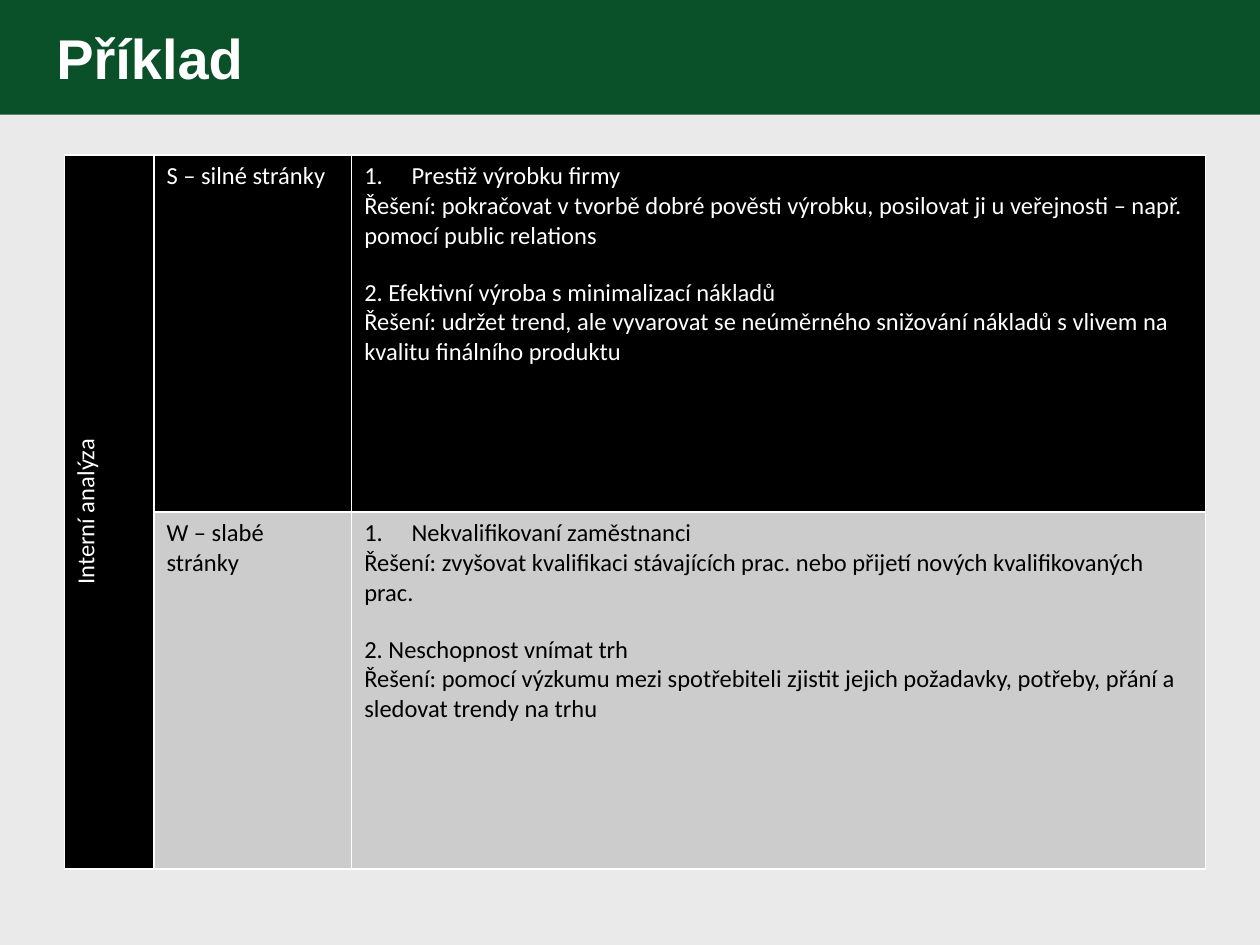
from lxml.etree import SubElement
from pptx import Presentation
from pptx.dml.color import RGBColor
from pptx.enum.shapes import MSO_SHAPE
from pptx.enum.text import MSO_ANCHOR, PP_ALIGN
from pptx.oxml import parse_xml
from pptx.oxml.ns import nsdecls, qn
from pptx.util import Pt

GREEN, WHITE, BLACK = "0A5028", "FFFFFF", "000000"
LIGHT_GRAY, GRAY = "EAEAEA", "CCCCCC"

STRENGTHS = [
    "Prestiž výrobku firmy",
    "Řešení: pokračovat v tvorbě dobré pověsti výrobku, posilovat ji u veřejnosti"
    " – např. pomocí public relations",
    "2. Efektivní výroba s minimalizací nákladů",
    "Řešení: udržet trend, ale vyvarovat se neúměrného snižování nákladů"
    " s vlivem na kvalitu finálního produktu",
]
WEAKNESSES = [
    "Nekvalifikovaní zaměstnanci",
    "Řešení: zvyšovat kvalifikaci stávajících prac. nebo přijetí nových"
    " kvalifikovaných prac.",
    "2. Neschopnost vnímat trh",
    "Řešení: pomocí výzkumu mezi spotřebiteli zjistit jejich požadavky, potřeby,"
    " přání a sledovat trendy na trhu",
]
ROWS = [
    ("S – silné stránky", STRENGTHS, BLACK, WHITE),
    ("W – slabé stránky", WEAKNESSES, GRAY, BLACK),
]


def color(value):
    return RGBColor.from_string(value)


def set_font(paragraph, name, size, value, bold=False):
    font = paragraph.font
    font.name, font.size, font.bold = name, Pt(size), bold
    font.color.rgb = color(value)


def add_header(slide, left, top, width, height):
    band = slide.shapes.add_shape(
        MSO_SHAPE.RECTANGLE, Pt(left), Pt(top), Pt(width), Pt(height))
    band.shadow.inherit = False
    band.fill.solid()
    band.fill.fore_color.rgb = color(GREEN)
    band.line.fill.background()

    title = slide.shapes.title
    band._element.addnext(title._element)  # title in front of the band
    title.left, title.top = Pt(left + 25), Pt(top + 2)
    title.width, title.height = Pt(551), Pt(height - 4)
    title.text_frame.text = "Příklad"
    title.text_frame.vertical_anchor = MSO_ANCHOR.MIDDLE
    paragraph = title.text_frame.paragraphs[0]
    paragraph.alignment = PP_ALIGN.LEFT
    set_font(paragraph, "Arial", 32, WHITE, bold=True)


def style_cell(cell, fill):
    """Fill the cell and draw a thin white border on each side."""
    cell.fill.solid()
    cell.fill.fore_color.rgb = color(fill)
    properties = cell._tc.get_or_add_tcPr()
    for index, side in enumerate("LRTB"):
        properties.insert(index, parse_xml(
            f'<a:ln{side} {nsdecls("a")} w="{Pt(1)}"><a:solidFill>'
            f'<a:srgbClr val="{WHITE}"/></a:solidFill></a:ln{side}>'))


def write_cell(cell, lines, value):
    cell.text_frame.text = "\n".join(lines)
    for paragraph in cell.text_frame.paragraphs:
        set_font(paragraph, "Calibri", 14, value)


def format_points(cell):
    """Number the first point and set the second one apart."""
    paragraphs = cell.text_frame.paragraphs
    properties = paragraphs[0]._p.get_or_add_pPr()
    properties.set("marL", str(Pt(27)))
    properties.set("indent", str(-Pt(27)))
    number = SubElement(properties, qn("a:buAutoNum"), type="arabicPeriod")
    properties.insert(0, number)
    paragraphs[2].space_before = Pt(15.5)


def add_analysis_table(slide, left, top, width, height):
    table = slide.shapes.add_table(
        len(ROWS), 3, Pt(left), Pt(top), Pt(width), Pt(height)).table
    table.first_row = table.horz_banding = False
    widths = [51, 113]
    widths.append(width - sum(widths))
    for column, column_width in zip(table.columns, widths):
        column.width = Pt(column_width)

    for index, (heading, points, fill, text_color) in enumerate(ROWS):
        side, heading_cell, points_cell = table.rows[index].cells
        style_cell(side, BLACK)
        for cell, lines in ((heading_cell, [heading]), (points_cell, points)):
            style_cell(cell, fill)
            write_cell(cell, lines, text_color)
        format_points(points_cell)

    side = table.cell(0, 0)
    side.merge(table.cell(len(ROWS) - 1, 0))
    write_cell(side, ["Interní analýza"], WHITE)
    side.text_frame.paragraphs[0].alignment = PP_ALIGN.CENTER
    side.vertical_anchor = MSO_ANCHOR.MIDDLE
    side._tc.get_or_add_tcPr().set("vert", "vert270")


def main():
    presentation = Presentation()
    presentation.slide_width, presentation.slide_height = Pt(720), Pt(540)
    slide = presentation.slides.add_slide(presentation.slide_layouts[5])
    slide.background.fill.solid()
    slide.background.fill.fore_color.rgb = color(LIGHT_GRAY)
    add_header(slide, 0, 0, 720, 65.5)
    add_analysis_table(slide, 37, 88.5, 652, 408)
    presentation.save("out.pptx")


if __name__ == "__main__":
    main()
